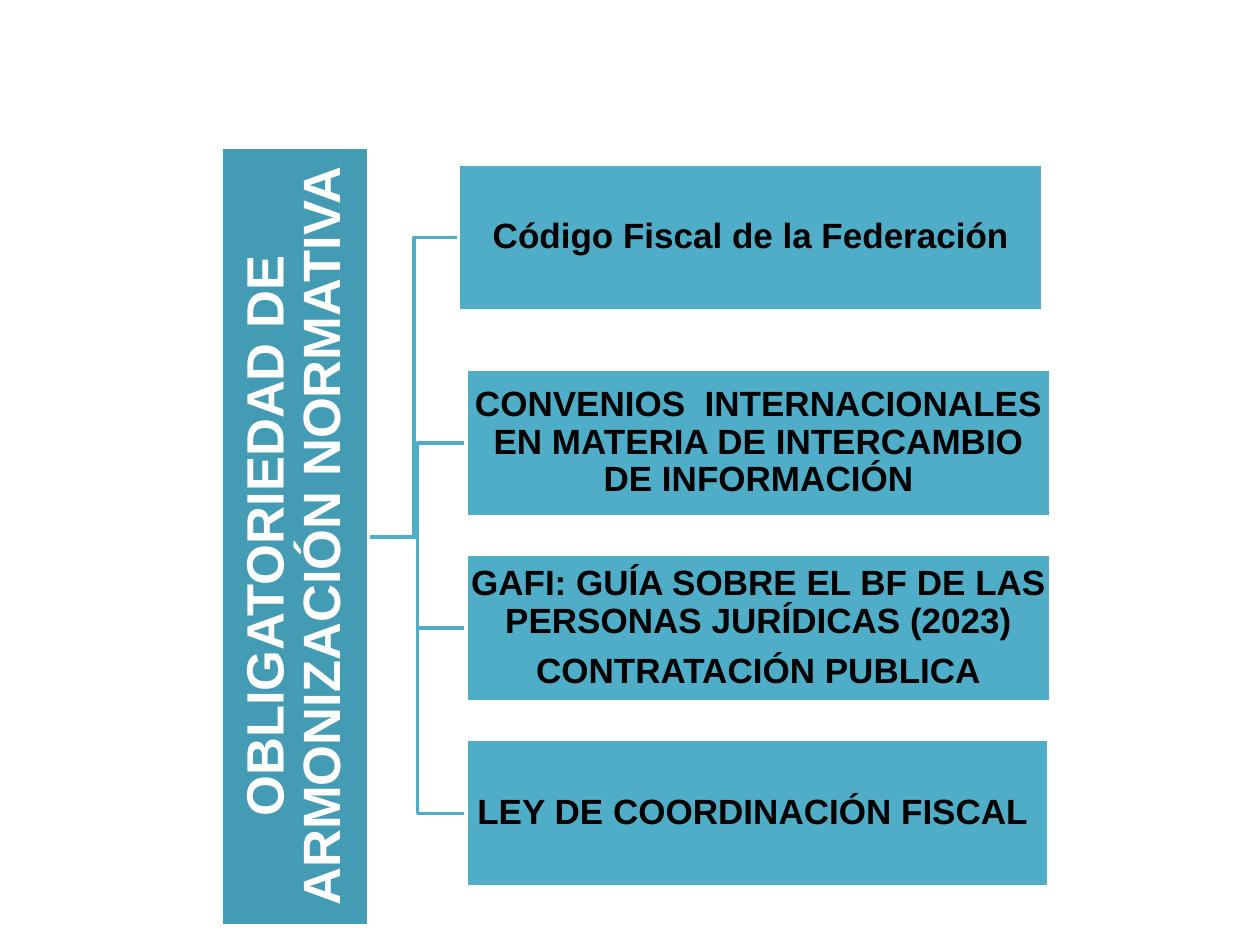
from pptx import Presentation
from pptx.dml.color import RGBColor
from pptx.enum.shapes import MSO_SHAPE as Preset
from pptx.enum.text import MSO_ANCHOR as Anchor, PP_ALIGN as Align
from pptx.util import Inches, Pt

TEAL = RGBColor(0x50, 0xAD, 0xC7)
DARK_TEAL = RGBColor(0x44, 0x9C, 0xB4)
WHITE = RGBColor(0xFF, 0xFF, 0xFF)
BLACK = RGBColor(0x00, 0x00, 0x00)

BOX_HEIGHT = 1.17
ROOT_X, ROOT_Y = 2.93, 4.26


def add_box(page, left, top, width, fill, lines, size, color, inset):
    box = page.shapes.add_shape(
        Preset.RECTANGLE, Inches(left), Inches(top), Inches(width), Inches(BOX_HEIGHT))
    box.shadow.inherit = False
    box.fill.solid()
    box.fill.fore_color.rgb = fill
    box.line.color.rgb = WHITE
    box.line.width = Pt(2)
    frame = box.text_frame
    frame.word_wrap = True
    frame.vertical_anchor = Anchor.MIDDLE
    frame.margin_left = frame.margin_right = Inches(inset)
    frame.margin_top = frame.margin_bottom = Inches(inset)
    frame.text = "\n".join(lines)
    for para in frame.paragraphs:
        para.alignment = Align.CENTER
        para.line_spacing = 0.9
        para.font.name = "Arial"
        para.font.size = Pt(size)
        para.font.bold = True
        para.font.color.rgb = color
    for para in frame.paragraphs[:-1]:
        para.space_after = Pt(size * 0.35)
    return box


deck = Presentation()
deck.slide_width = Inches(10)
deck.slide_height = Inches(7.5)
page = deck.slides.add_slide(deck.slide_layouts[6])

branches = [
    (3.64, 1.3, 4.64, ["Código Fiscal de la Federación"]),
    (3.7, 2.93, 4.64, ["CONVENIOS  INTERNACIONALES EN MATERIA DE INTERCAMBIO DE INFORMACIÓN"]),
    (3.7, 4.4, 4.64, ["GAFI: GUÍA SOBRE EL BF DE LAS PERSONAS JURÍDICAS (2023)",
                      "CONTRATACIÓN PUBLICA"]),
    (3.7, 5.87, 4.62, ["LEY DE COORDINACIÓN FISCAL "]),
]

for left, top, width, lines in reversed(branches):
    middle_x = (ROOT_X + left) / 2
    branch_y = top + BOX_HEIGHT / 2
    elbow = page.shapes.build_freeform(Inches(ROOT_X), Inches(ROOT_Y))
    elbow.add_line_segments(
        [(Inches(x), Inches(y)) for x, y in
         [(middle_x, ROOT_Y), (middle_x, branch_y), (left, branch_y)]], close=False)
    link = elbow.convert_to_shape()
    link.shadow.inherit = False
    link.fill.background()
    link.line.color.rgb = TEAL
    link.line.width = Pt(2)

title = add_box(page, -0.75, 3.67, 6.18, DARK_TEAL,
                ["OBLIGATORIEDAD DE ARMONIZACIÓN NORMATIVA"], 30, WHITE, 0.02)
title.rotation = 270

for left, top, width, lines in branches:
    add_box(page, left, top, width, TEAL, lines, 20, BLACK, 0.01)

deck.save("out.pptx")
